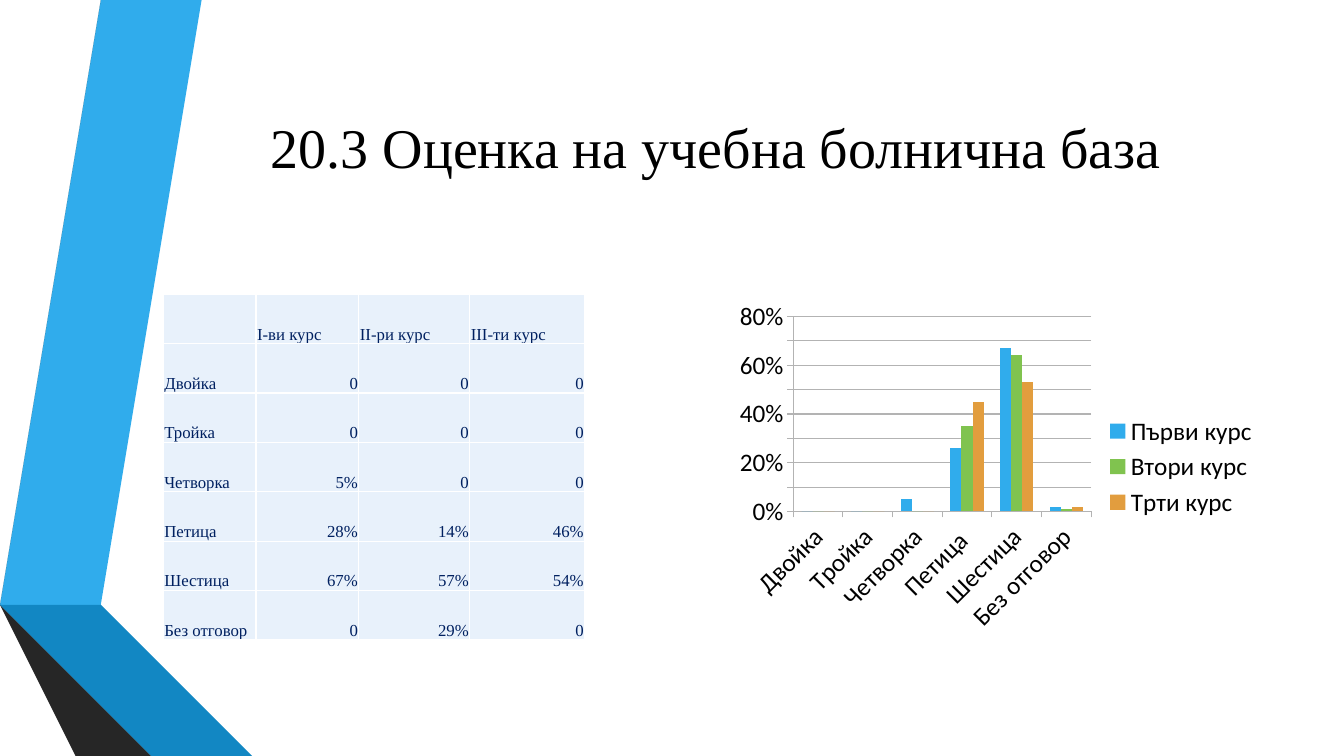
from dataclasses import dataclass

from lxml import etree
from pptx import Presentation
from pptx import util as u
from pptx.chart.data import CategoryChartData
from pptx.dml.color import RGBColor
from pptx.enum import chart as chart_enum
from pptx.enum import text
from pptx.oxml.ns import qn
from pptx.slide import Slide
from pptx.table import _Cell as Cell

COLOURS = {
    "blue": "30ACEC", "mid_blue": "1287C3", "deep_blue": "0C5A82",
    "grey": "595959", "dark_grey": "404040", "darkest_grey": "262626",
    "green": "80C34F", "orange": "E29D3E", "grid": "B3B3B3",
    "black": "000000", "navy": "002060", "cell": "E8F1FB", "white": "FFFFFF",
}
SERIF = "Times New Roman"
SANS = "Calibri"


@dataclass
class Ribbon:
    colour: str
    points: list[tuple[float, float]]


@dataclass
class Course:
    name: str
    colour: str
    shares: list[float]


RIBBONS = [
    Ribbon("blue", [(0.5, 5.78), (0.77, 5.83), (1.73, 0), (1.45, 0)]),
    Ribbon("grey", [(1.39, 0), (1.11, 0), (0.16, 5.73), (0.44, 5.77)]),
    Ribbon("darkest_grey", [(0.16, 5.73), (1.45, 7.5), (1.51, 7.5)]),
    Ribbon("deep_blue", [(0.5, 5.79), (2.08, 7.5), (2.14, 7.5)]),
    Ribbon("mid_blue", [(0.5, 5.79), (2.14, 7.5), (2.83, 7.5), (0.77, 5.83), (0.5, 5.78)]),
    Ribbon("dark_grey", [(2.02, 7.5), (0.48, 5.83), (0.43, 5.78), (0.44, 5.77),
                         (0.16, 5.73), (1.51, 7.5)]),
]
COLUMN_WIDTHS = [0.92, 1.02, 1.1, 1.14]
ROW_HEIGHT = 0.49
GRADE_ROWS = [
    ["", "I-ви курс", "II-ри курс", "III-ти курс"],
    ["Двойка", "0", "0", "0"],
    ["Тройка", "0", "0", "0"],
    ["Четворка", "5%", "0", "0"],
    ["Петица", "28%", "14%", "46%"],
    ["Шестица", "67%", "57%", "54%"],
    ["Без отговор", "0", "29%", "0"],
]
GRADES = ["Двойка", "Тройка", "Четворка", "Петица ", "Шестица", "Без отговор"]
COURSES = [
    Course("Първи курс", "blue", [0, 0, 0.05, 0.26, 0.67, 0.02]),
    Course("Втори курс", "green", [0, 0, 0, 0.35, 0.64, 0.01]),
    Course("Трти курс", "orange", [0, 0, 0, 0.45, 0.53, 0.02]),
]


def rgb(name: str) -> RGBColor:
    return RGBColor.from_string(COLOURS[name])


def style_font(font, face: str, size: float, colour: str) -> None:
    font.name = face
    font.size = u.Pt(size)
    font.color.rgb = rgb(colour)


def draw_ribbon(page: Slide, ribbon: Ribbon) -> None:
    start, *rest = ribbon.points
    builder = page.shapes.build_freeform(*start, scale=u.Inches(1))
    builder.add_line_segments(rest, close=True)
    shape = builder.convert_to_shape()
    shape.shadow.inherit = False
    shape.fill.solid()
    shape.fill.fore_color.rgb = rgb(ribbon.colour)
    shape.line.fill.background()


def draw_title(page: Slide) -> None:
    box = page.shapes.add_textbox(u.Inches(1.62), u.Inches(0.75), u.Inches(10.96), u.Inches(1.39))
    frame = box.text_frame
    frame.word_wrap = True
    frame.vertical_anchor = text.MSO_ANCHOR.MIDDLE
    frame.text = "20.3 Оценка на учебна болнична база"
    para = frame.paragraphs[0]
    para.alignment = text.PP_ALIGN.CENTER
    style_font(para.runs[0].font, SERIF, 40, "black")


def add_borders(cell: Cell) -> None:
    properties = cell._tc.get_or_add_tcPr()
    for side in ("a:lnL", "a:lnR", "a:lnT", "a:lnB"):
        line = etree.SubElement(properties, qn(side), w=str(u.Pt(1)))
        fill = etree.SubElement(line, qn("a:solidFill"))
        etree.SubElement(fill, qn("a:srgbClr"), val=COLOURS["white"])


def fill_cell(cell: Cell, value: str, is_number: bool) -> None:
    add_borders(cell)
    cell.fill.solid()
    cell.fill.fore_color.rgb = rgb("cell")
    cell.margin_left = cell.margin_right = cell.margin_top = u.Inches(0.01)
    cell.margin_bottom = 0
    cell.vertical_anchor = text.MSO_ANCHOR.BOTTOM
    cell.text_frame.text = value
    para = cell.text_frame.paragraphs[0]
    para.alignment = text.PP_ALIGN.RIGHT if is_number else text.PP_ALIGN.LEFT
    for span in para.runs:
        style_font(span.font, SERIF, 12, "navy")


def draw_table(page: Slide) -> None:
    row_count = len(GRADE_ROWS)
    table = page.shapes.add_table(
        row_count, len(COLUMN_WIDTHS), u.Inches(1.62), u.Inches(2.92),
        u.Inches(sum(COLUMN_WIDTHS)), u.Inches(ROW_HEIGHT * row_count)).table
    table.first_row = table.horz_banding = False
    for column, width in zip(table.columns, COLUMN_WIDTHS):
        column.width = u.Inches(width)
    for row_index, values in enumerate(GRADE_ROWS):
        table.rows[row_index].height = u.Inches(ROW_HEIGHT)
        for column_index, value in enumerate(values):
            fill_cell(table.cell(row_index, column_index), value,
                      row_index > 0 and column_index > 0)


def draw_chart(page: Slide) -> None:
    data = CategoryChartData(number_format="0%")
    data.categories = GRADES
    for course in COURSES:
        data.add_series(course.name, course.shares)
    chart = page.shapes.add_chart(
        chart_enum.XL_CHART_TYPE.COLUMN_CLUSTERED, u.Inches(7.23), u.Inches(2.92),
        u.Inches(5.35), u.Inches(3.42), data).chart
    style_font(chart.font, SANS, 18, "black")
    chart.has_title = False
    chart.has_legend = True
    chart.legend.position = chart_enum.XL_LEGEND_POSITION.RIGHT
    chart.legend.include_in_layout = False

    plot = chart.plots[0]
    plot.gap_width = 150
    plot.vary_by_categories = False
    for series, course in zip(plot.series, COURSES):
        series.invert_if_negative = False
        series.format.fill.solid()
        series.format.fill.fore_color.rgb = rgb(course.colour)

    scale = chart.value_axis
    scale.minimum_scale = 0
    scale.maximum_scale = 0.8
    scale.major_unit = 0.1
    scale.tick_labels.number_format = "0%"
    scale.tick_labels.number_format_is_linked = False
    scale.has_major_gridlines = True
    scale.major_gridlines.format.line.color.rgb = rgb("grid")
    for axis in (scale, chart.category_axis):
        axis.major_tick_mark = chart_enum.XL_TICK_MARK.OUTSIDE
        axis.format.line.color.rgb = rgb("grid")


def main() -> None:
    deck = Presentation()
    deck.slide_width = u.Inches(13.33)
    deck.slide_height = u.Inches(7.5)
    page = deck.slides.add_slide(deck.slide_layouts[6])
    for ribbon in RIBBONS:
        draw_ribbon(page, ribbon)
    draw_title(page)
    draw_table(page)
    draw_chart(page)
    deck.save("out.pptx")


if __name__ == "__main__":
    main()
